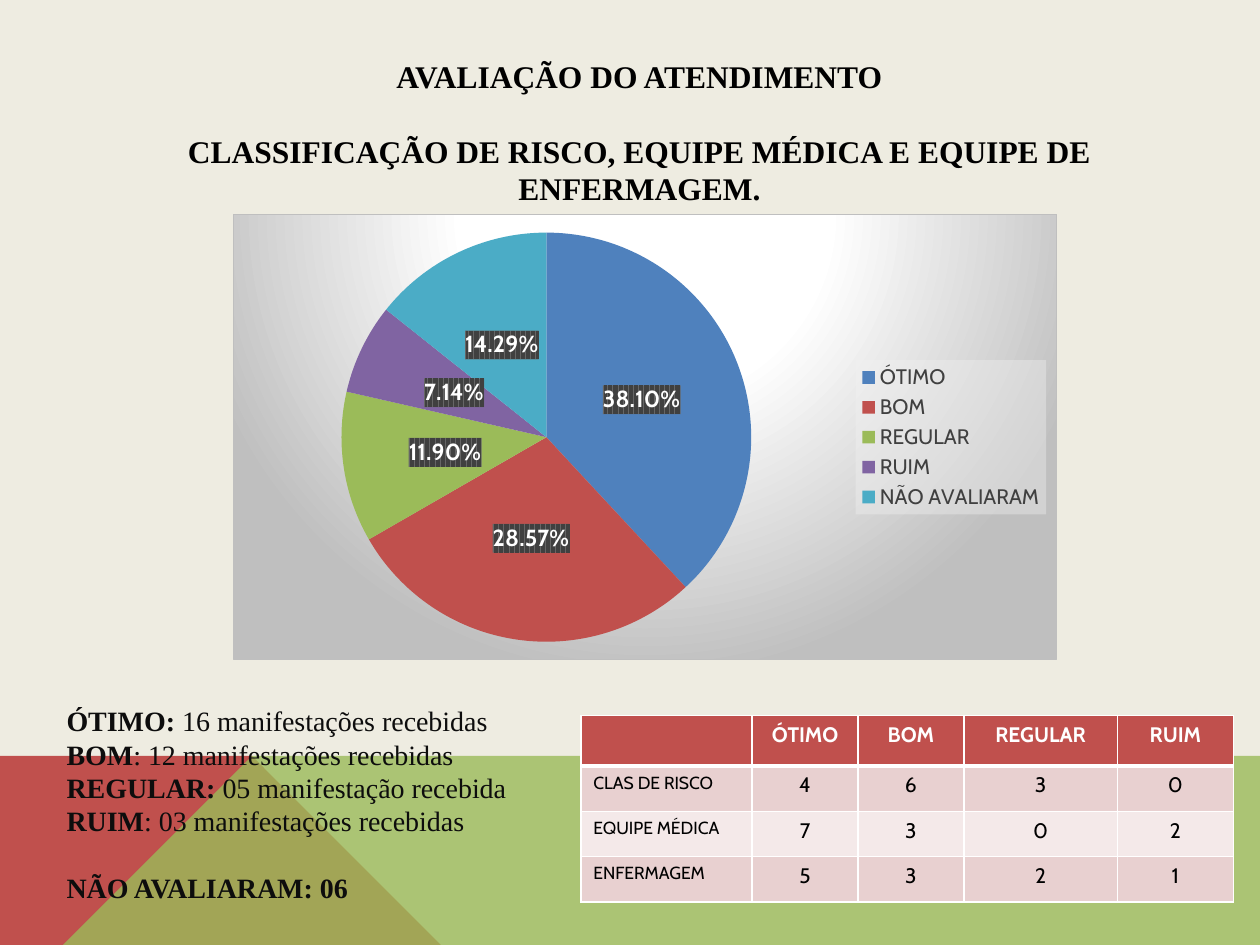
import pptx
import pptx.util
import pptx.chart.data
import pptx.dml.color
import pptx.enum.chart
import pptx.enum.text
import pptx.oxml
from pptx.oxml.ns import nsdecls

Inches, Pt = pptx.util.Inches, pptx.util.Pt
Align = pptx.enum.text.PP_ALIGN
Anchor = pptx.enum.text.MSO_ANCHOR
SERIF, SANS = "Times New Roman", "Cabin"
W, H = 10, 7.5
BAND = 5.52  # top of the coloured footer
LEAD = 1.19  # line height as a share of the font size

# Content
TITLE = ["AVALIAÇÃO DO ATENDIMENTO",
         "CLASSIFICAÇÃO DE RISCO, EQUIPE MÉDICA E EQUIPE DE ENFERMAGEM."]
SLICES = [("ÓTIMO", 38.1, "4F81BD"), ("BOM", 28.57, "C0504D"),
          ("REGULAR", 11.9, "9BBB59"), ("RUIM", 7.14, "8064A2"),
          ("NÃO AVALIARAM", 14.29, "4BACC6")]
NOTES = [("ÓTIMO: ", "16 manifestações recebidas"),
         ("BOM", ": 12 manifestações recebidas"),
         ("REGULAR: ", "05 manifestação recebida"),
         ("RUIM", ": 03 manifestações recebidas"),
         ("NÃO AVALIARAM: 06", "")]
ROWS = [("", "ÓTIMO", "BOM", "REGULAR", "RUIM"),
        ("CLAS DE RISCO", "4", "6", "3", "0"),
        ("EQUIPE MÉDICA", "7", "3", "0", "2"),
        ("ENFERMAGEM", "5", "3", "2", "1")]
COLS = [1.36, 0.84, 0.84, 1.22, 0.92]
HIGHS = [0.4, 0.36, 0.36, 0.36]
FILLS = ["C0504D", "E8D0D0", "F4E9E9", "E8D0D0"]
FOOTER = [("C0504D", 100, [(0, H), (0, BAND), (2.23, BAND), (3.91, H)]),
          ("9BBB59", 80, [(0, H), (2.23, BAND), (W, BAND), (W, H)])]


def color(code):
    return pptx.dml.color.RGBColor.from_string(code)


def style(font, face, size, code, bold=None):
    font.name, font.size, font.bold = face, Pt(size), bold
    font.color.rgb = color(code)


def paint(fill, code):
    fill.solid()
    fill.fore_color.rgb = color(code)


def xml(text):
    """Parse one element, declaring the drawing and chart namespaces."""
    head, rest = text.split(">", 1)
    return pptx.oxml.parse_xml(f"{head} {nsdecls('a', 'c')}>{rest}")


def solid(code, alpha=100):
    return (f'<a:solidFill><a:srgbClr val="{code}">'
            f'<a:alpha val="{alpha * 1000}"/></a:srgbClr></a:solidFill>')


def text_box(box, anchor):
    frame = slide.shapes.add_textbox(*map(Inches, box)).text_frame
    frame.word_wrap, frame.vertical_anchor = True, anchor
    return frame


def add_para(frame, i, size, gap):
    """Next paragraph; gap leaves one line free above it."""
    para = frame.add_paragraph() if i else frame.paragraphs[0]
    para.line_spacing = Pt(size * LEAD)
    para.space_before = Pt(size * LEAD if gap else 0)
    return para


prs = pptx.Presentation()
prs.slide_width, prs.slide_height = Inches(W), Inches(H)
slide = prs.slides.add_slide(prs.slide_layouts[6])
paint(slide.background.fill, "EEECE1")

# Footer shapes
for code, alpha, points in FOOTER:
    pen = slide.shapes.build_freeform(*points[0], scale=Inches(1))
    pen.add_line_segments(points[1:], close=True)
    shape = pen.convert_to_shape()
    shape.shadow.inherit = False
    shape.line.fill.background()
    paint(shape.fill, code)
    tint = shape.fill._xPr.find(".//" + pptx.oxml.ns.qn("a:srgbClr"))
    tint.append(xml(f'<a:alpha val="{alpha * 1000}"></a:alpha>'))

# Title
frame = text_box((0.62, 0.4, 8.91, 1.3), Anchor.MIDDLE)
for i, line in enumerate(TITLE):
    para = add_para(frame, i, 18, i == 1)
    para.text, para.alignment = line, Align.CENTER
    style(para.font, SERIF, 18, "000000", True)

# Pie chart
data = pptx.chart.data.CategoryChartData()
data.categories = [name for name, _, _ in SLICES]
data.add_series("Series 1", [value for _, value, _ in SLICES])
chart = slide.shapes.add_chart(pptx.enum.chart.XL_CHART_TYPE.PIE,
                               *map(Inches, (1.85, 1.7, 6.54, 3.54)), data).chart
chart.has_title = False
style(chart.font, SANS, 10, "000000")
plot = chart.plots[0]
plot.vary_by_categories = True
for i, (_, _, code) in enumerate(SLICES):
    paint(plot.series[0].points[i].format.fill, code)

plot.has_data_labels = True
labels = plot.data_labels
labels.show_percentage, labels.show_value = True, False
labels.number_format, labels.number_format_is_linked = "0.00%", False
labels.position = pptx.enum.chart.XL_LABEL_POSITION.CENTER
style(labels.font, SANS, 13.3, "FFFFFF", True)
labels._element.find(pptx.oxml.ns.qn("c:txPr")).addprevious(xml(
    '<c:spPr><a:pattFill prst="dkVert"><a:fgClr><a:srgbClr val="404040"/></a:fgClr>'
    '<a:bgClr><a:srgbClr val="666666"/></a:bgClr></a:pattFill></c:spPr>'))

chart.has_legend = True
legend = chart.legend
legend.position = pptx.enum.chart.XL_LEGEND_POSITION.RIGHT
legend.include_in_layout = False
style(legend.font, SANS, 12, "404040")
legend._element.find(pptx.oxml.ns.qn("c:txPr")).addprevious(
    xml(f'<c:spPr>{solid("F2F2F2", 39)}</c:spPr>'))

stops = "".join(f'<a:gs pos="{at * 1000}"><a:srgbClr val="{code}"/></a:gs>'
                for at, code in [(0, "FFFFFF"), (39, "FFFFFF"), (100, "BFBFBF")])
chart._chartSpace.chart.addnext(xml(
    f'<c:spPr><a:gradFill><a:gsLst>{stops}</a:gsLst><a:path path="circle">'
    '<a:fillToRect l="50000" t="-80000" r="50000" b="180000"/></a:path></a:gradFill>'
    f'<a:ln w="9525">{solid("BFBFBF")}</a:ln></c:spPr>'))
area = chart._chartSpace.chart.plotArea
for old in area.findall(pptx.oxml.ns.qn("c:layout")):
    area.remove(old)
places = "".join(f'<c:{key} val="{val}"/>' for key, val in [
    ("layoutTarget", "inner"), ("xMode", "edge"), ("yMode", "edge"),
    ("x", 0.13), ("y", 0.04), ("w", 0.5), ("h", 0.92)])
area.insert(0, xml(f"<c:layout><c:manualLayout>{places}</c:manualLayout></c:layout>"))

# Counts
frame = text_box((0.43, 5.54, 4.42, 2.02), Anchor.TOP)
for i, (name, rest) in enumerate(NOTES):
    para = add_para(frame, i, 16, i == len(NOTES) - 1)
    style(para.font, SERIF, 16, "0D0D0D")
    para.add_run().text = name
    para.runs[0].font.bold = True
    if rest:
        para.add_run().text = rest

# Table
table = slide.shapes.add_table(len(ROWS), len(COLS), *map(
    Inches, (4.61, 5.68, sum(COLS), sum(HIGHS)))).table
for col, wide in zip(table.columns, COLS):
    col.width = Inches(wide)
for r, words in enumerate(ROWS):
    table.rows[r].height = Inches(HIGHS[r])
    for c, word in enumerate(words):
        cell = table.cell(r, c)
        for side in "LRTB":
            thick = 3 if (r, side) in [(0, "B"), (1, "T")] else 1
            cell._tc.get_or_add_tcPr().append(xml(
                f'<a:ln{side} w="{Pt(thick)}">{solid("FFFFFF")}</a:ln{side}>'))
        paint(cell.fill, FILLS[r])
        para = cell.text_frame.paragraphs[0]
        para.text = word
        para.alignment = Align.CENTER if c else Align.LEFT
        style(para.font, SANS, 12 if c else 10,
              "000000" if r else "FFFFFF", r == 0)

prs.save("out.pptx")
